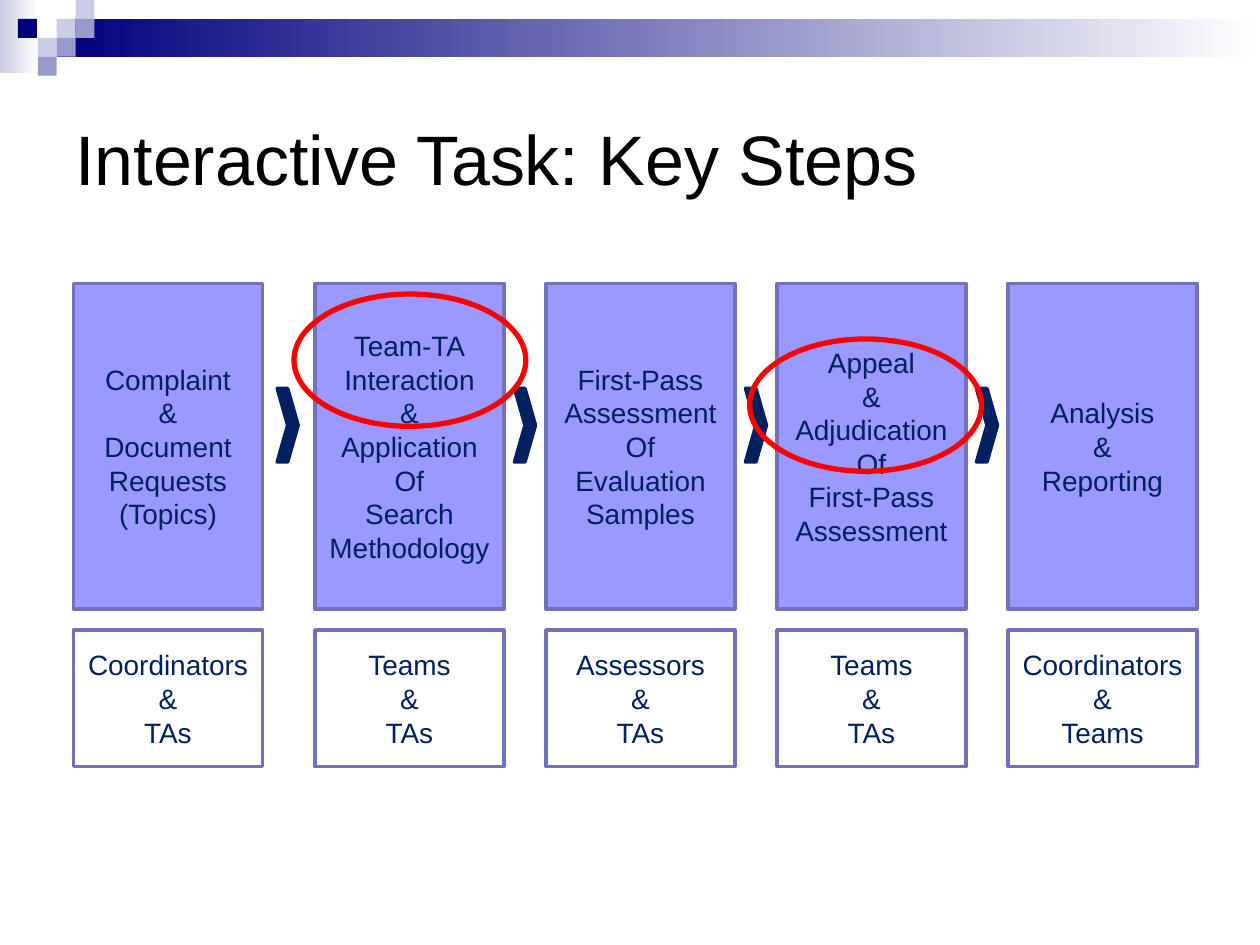
from pptx import Presentation
from pptx.dml.color import RGBColor
from pptx.enum import shapes, text
from pptx.util import Pt

SHAPE = shapes.MSO_SHAPE
NAVY = "002060"
PITCH = 132
STEP_WIDTH = 108

STEPS = [
    (42, ["Complaint", "&", "Document", "Requests", "(Topics)"],
     ["Coordinators &", "TAs"]),
    (180, ["Team-TA", "Interaction", "&", "Application", "Of", "Search", "Methodology"],
     ["Teams", "&", "TAs"]),
    (180 + PITCH, ["First-Pass", "Assessment", "Of", "Evaluation", "Samples"],
     ["Assessors", "&", "TAs"]),
    (180 + 2 * PITCH, ["Appeal", "&", "Adjudication", "Of", "First-Pass", "Assessment"],
     ["Teams", "&", "TAs"]),
    (180 + 3 * PITCH, ["Analysis", "&", "Reporting"],
     ["Coordinators", "&", "Teams"]),
]
CHEVRON_LEFTS = [158.4, 294, 294 + PITCH, 294 + 2 * PITCH]
HIGHLIGHTS = [(168, 168), (428.4, 193.7)]
TILES = [
    (1, 1, "CCCCE6"), (2, 0, "CCCCE6"), (2, 1, "9999CC"), (0, 2, "CCCCE6"),
    (-1.05, 1, "00007D"), (1, 2, "9999CC"), (0, 3, "9999CC"),
]


def color(value):
    """Turn a hex string into a colour."""
    return RGBColor.from_string(value)


def add_shape(slide, kind, box, fill=None, line=None, weight=2):
    """Add a flat preset shape with an optional fill and outline."""
    shape = slide.shapes.add_shape(kind, *(Pt(length) for length in box))
    shape.shadow.inherit = False
    if fill:
        shape.fill.solid()
        shape.fill.fore_color.rgb = color(fill)
    else:
        shape.fill.background()
    if line:
        shape.line.color.rgb = color(line)
        shape.line.width = Pt(weight)
    else:
        shape.line.fill.background()
    return shape


def write(shape, lines, size=16, ink=NAVY, align=text.PP_ALIGN.CENTER):
    """Write one paragraph per line, centred vertically."""
    frame = shape.text_frame
    frame.word_wrap = True
    frame.vertical_anchor = text.MSO_ANCHOR.MIDDLE
    for index, line in enumerate(lines):
        paragraph = frame.add_paragraph() if index else frame.paragraphs[0]
        paragraph.alignment = align
        run = paragraph.add_run()
        run.text = line
        run.font.name = "Arial"
        run.font.size = Pt(size)
        run.font.color.rgb = color(ink)


def add_fade(slide, box, start):
    """Add a bar that fades to white from left to right."""
    fill = add_shape(slide, SHAPE.RECTANGLE, box).fill
    fill.gradient()
    fill.gradient_angle = 0
    for stop, shade in zip(fill.gradient_stops, (start, "FFFFFF")):
        stop.color.rgb = color(shade)


def add_banner(slide, left, top, width, tile=10.8):
    """Draw the fading bars and the tile pattern along the top."""
    add_fade(slide, (left, top, 22.3, 41.8), "CCCCE6")
    add_fade(slide, (left + 3 * tile, top + tile, width - 3 * tile, 21.6), "00007D")
    for column, row, shade in TILES:
        corner = (left + (column + 2) * tile, top + row * tile)
        add_shape(slide, SHAPE.RECTANGLE, (*corner, tile, tile), shade)


def add_title(slide, left, top, width, height):
    """Place the slide title."""
    title = slide.shapes.add_textbox(Pt(left), Pt(top), Pt(width), Pt(height))
    write(title, ["Interactive Task: Key Steps"], size=40, ink="000000",
          align=text.PP_ALIGN.LEFT)


def add_step(slide, left, top, task, people):
    """Stack a task box above the box of people responsible."""
    task_box = add_shape(slide, SHAPE.RECTANGLE, (left, top, STEP_WIDTH, 186),
                         "9999FF", "7171BD")
    write(task_box, task)
    people_box = add_shape(slide, SHAPE.RECTANGLE, (left, top + 198, STEP_WIDTH, 78),
                           line="7171BD")
    write(people_box, people)


def add_process(slide, top):
    """Draw the steps, the chevrons between them and the highlights."""
    for left, task, people in STEPS:
        add_step(slide, left, top, task, people)
    for left in CHEVRON_LEFTS:
        add_shape(slide, SHAPE.CHEVRON, (left, top + 60, 12, 42), NAVY, NAVY)
    for left, oval_top in HIGHLIGHTS:
        add_shape(slide, SHAPE.OVAL, (left, oval_top, 132.5, 75.6),
                  line="FF0000", weight=3)


def main():
    """Build and save the presentation."""
    deck = Presentation()
    deck.slide_width, deck.slide_height = Pt(720), Pt(540)
    slide = deck.slides.add_slide(deck.slide_layouts[6])
    add_banner(slide, 0, 0, 720)
    add_title(slide, 36, 36, 648, 108)
    add_process(slide, 162)
    deck.save("out.pptx")


if __name__ == "__main__":
    main()
